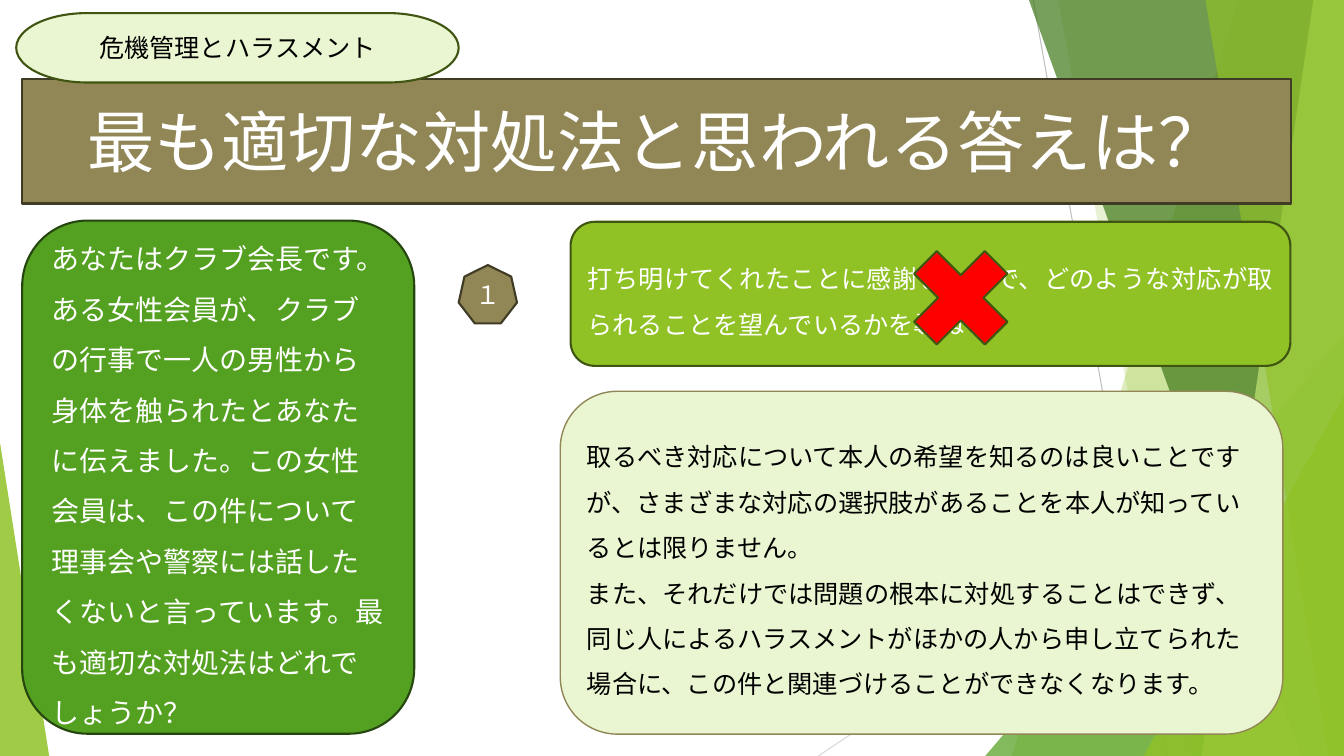
from lxml.etree import SubElement
from pptx import Presentation
from pptx.dml.color import RGBColor
from pptx.enum.shapes import MSO_CONNECTOR as CONN, MSO_SHAPE as SHAPE
from pptx.enum.text import MSO_ANCHOR as ANCHOR, MSO_AUTO_SIZE as AUTO, PP_ALIGN as ALIGN
from pptx.oxml.ns import qn
from pptx.util import Cm, Pt

GOTHIC = "Noto Sans CJK JP"
WHITE, BLACK = "FFFFFF", "000000"
LIME, GREEN, PALE, BROWN = "90C226", "54A021", "EAF6D1", "918655"
DARK_LIME, DARK_GREEN, DARK_BROWN = "3F5511", "25460E", "403B25"

QUESTION = ("あなたはクラブ会長です。ある女性会員が、クラブの行事で一人の男性から身体を触られたとあなたに伝えました。"
            "この女性会員は、この件について理事会や警察には話したくないと言っています。最も適切な対処法はどれでしょうか？")
ANSWER = "打ち明けてくれたことに感謝した上で、どのような対応が取られることを望んでいるかを尋ねる。"
REASONS = [
    "取るべき対応について本人の希望を知るのは良いことですが、さまざまな対応の選択肢があることを本人が知っているとは限りません。",
    "また、それだけでは問題の根本に対処することはできず、同じ人によるハラスメントがほかの人から申し立てられた場合に、"
    "この件と関連づけることができなくなります。",
]


def rgb(code):
    """Turn a hex string into a colour."""
    return RGBColor.from_string(code)


def paint(sp, fill, line=None, width=1.5, alpha=100):
    """Set the fill, its opacity and the outline of a shape."""
    sp.fill.solid()
    sp.fill.fore_color.rgb = rgb(fill)
    if alpha < 100:
        clr = sp.fill._xPr.find(qn("a:solidFill"))[0]
        SubElement(clr, qn("a:alpha"), val=str(alpha * 1000))
    if line:
        sp.line.color.rgb = rgb(line)
        sp.line.width = Pt(width)
    else:
        sp.line.fill.background()


def write(sp, texts, size, color, font=GOTHIC, **para):
    """Fill a shape with formatted paragraphs."""
    tf = sp.text_frame
    frame = {"word_wrap": True, "auto_size": AUTO.NONE, "vertical_anchor": ANCHOR.MIDDLE}
    for name, value in frame.items():
        setattr(tf, name, value)
    for i, text in enumerate(texts):
        p = tf.add_paragraph() if i else tf.paragraphs[0]
        for name, value in ({"alignment": ALIGN.LEFT} | para).items():
            setattr(p, name, value)
        r = p.add_run()
        r.text = text
        for name, value in {"size": Pt(size), "name": font}.items():
            setattr(r.font, name, value)
        r.font.color.rgb = rgb(color)
        SubElement(r.font._element, qn("a:ea"), typeface=font)


def add_box(s, kind, box, fill, line=None, width=1.5, alpha=100):
    """Add a painted preset shape without shadow."""
    sp = s.shapes.add_shape(kind, *map(Cm, box))
    sp.shadow.inherit = False
    paint(sp, fill, line, width, alpha)
    return sp


def add_band(s, box, top, bottom, fill, alpha):
    """Add a slanted band that runs to the right edge of the box."""
    x, y, w, h = box
    points = [(x + w, y), (x + w, y + h), (x + bottom, y + h)]
    fb = s.shapes.build_freeform(Cm(x + top), Cm(y), 1)
    fb.add_line_segments([(Cm(a), Cm(b)) for a, b in points])
    sp = fb.convert_to_shape()
    sp.shadow.inherit = False
    paint(sp, fill, alpha=alpha)


def add_wedge(s, box, width, height, fill, alpha, right=True):
    """Add a right triangle in a lower corner of the box."""
    x, y, w, h = box
    left = x + w - width if right else x
    sp = add_box(s, SHAPE.ISOSCELES_TRIANGLE, (left, y + h - height, width, height),
                 fill, alpha=alpha)
    sp.adjustments[0] = 1 if right else 0


def draw_background(s, box):
    """Draw the thin lines and the green facets."""
    x, y, w, h = box
    for x1, y1, x2, color in [(26.04, 0, 29.41, "BFBFBF"), (w, 10.24, 20.62, "D9D9D9")]:
        ln = s.shapes.add_connector(CONN.STRAIGHT, Cm(x + x1), Cm(y + y1), Cm(x + x2), Cm(y + h))
        ln.line.color.rgb = rgb(color)
        ln.line.width = Pt(0.75)
        SubElement(ln._element.spPr, qn("a:effectLst"))
    add_band(s, box, 31.19, 25.5, LIME, 30)
    add_band(s, box, 26.67, 30.05, LIME, 20)
    add_wedge(s, box, 9.04, 10.59, GREEN, 72)
    add_band(s, box, 25.93, 32.79, "3F7819", 70)
    add_band(s, box, 33.1, 30.28, "C0E474", 70)
    add_band(s, box, 30.38, 33.48, LIME, 65)
    add_wedge(s, box, 5.05, 9.07, LIME, 80)
    add_wedge(s, box, 1.24, 7.9, LIME, 85, right=False)


def draw_heading(s, box):
    """Place the title banner and the topic label above it."""
    x, y, w, h = box
    title = s.shapes.title
    s.shapes._spTree.append(title._element)
    for name, value in zip(("left", "top", "width", "height"), box):
        setattr(title, name, Cm(value))
    geom = SubElement(title._element.spPr, qn("a:prstGeom"), prst="roundRect")
    SubElement(geom, qn("a:avLst"))
    paint(title, BROWN, DARK_BROWN)
    write(title, ["最も適切な対処法と思われる答えは？"], 48, WHITE, alignment=ALIGN.CENTER)
    label = add_box(s, SHAPE.FLOWCHART_TERMINATOR, (x - 0.15, y - 1.65, 11.15, 1.75),
                    PALE, DARK_LIME)
    write(label, ["危機管理とハラスメント"], 18, BLACK, "Roboto", alignment=ALIGN.CENTER)


def draw_question(s, box):
    """Place the case to be judged."""
    sp = add_box(s, SHAPE.ROUNDED_RECTANGLE, box, GREEN, DARK_GREEN)
    write(sp, [QUESTION], 20, WHITE, line_spacing=1.5)


def draw_answer(s, box):
    """Place the answer with its number and the cross that rejects it."""
    x, y, w, h = box
    sp = add_box(s, SHAPE.ROUNDED_RECTANGLE, box, LIME, DARK_LIME)
    write(sp, [ANSWER], 18, WHITE, alignment=ALIGN.JUSTIFY, line_spacing=1.5)
    number = add_box(s, SHAPE.HEPTAGON, (x - 2.82, y + 1.09, 1.47, 1.47), BROWN, DARK_BROWN)
    write(number, ["１"], 18, WHITE, alignment=ALIGN.CENTER)
    add_box(s, SHAPE.MATH_MULTIPLY, (x + 8.12, y + 0.2, 3.43, 3.43), "FF0000", DARK_LIME)


def draw_reasons(s, box):
    """Place the explanation of the answer."""
    sp = add_box(s, SHAPE.ROUNDED_RECTANGLE, box, PALE, BROWN, 1)
    write(sp, REASONS, 18, BLACK, line_spacing=1.5)


def main():
    """Build the slide and save it."""
    prs = Presentation()
    prs.slide_width, prs.slide_height = Cm(33.87), Cm(19.05)
    s = prs.slides.add_slide(prs.slide_layouts[5])
    draw_background(s, (0, 0, 33.87, 19.05))
    draw_heading(s, (0.56, 1.98, 31.98, 3.15))
    draw_answer(s, (14.38, 5.59, 18.14, 3.63))
    draw_reasons(s, (14.12, 9.86, 18.21, 8.64))
    draw_question(s, (0.56, 5.56, 9.88, 12.93))
    prs.save("out.pptx")


if __name__ == "__main__":
    main()
